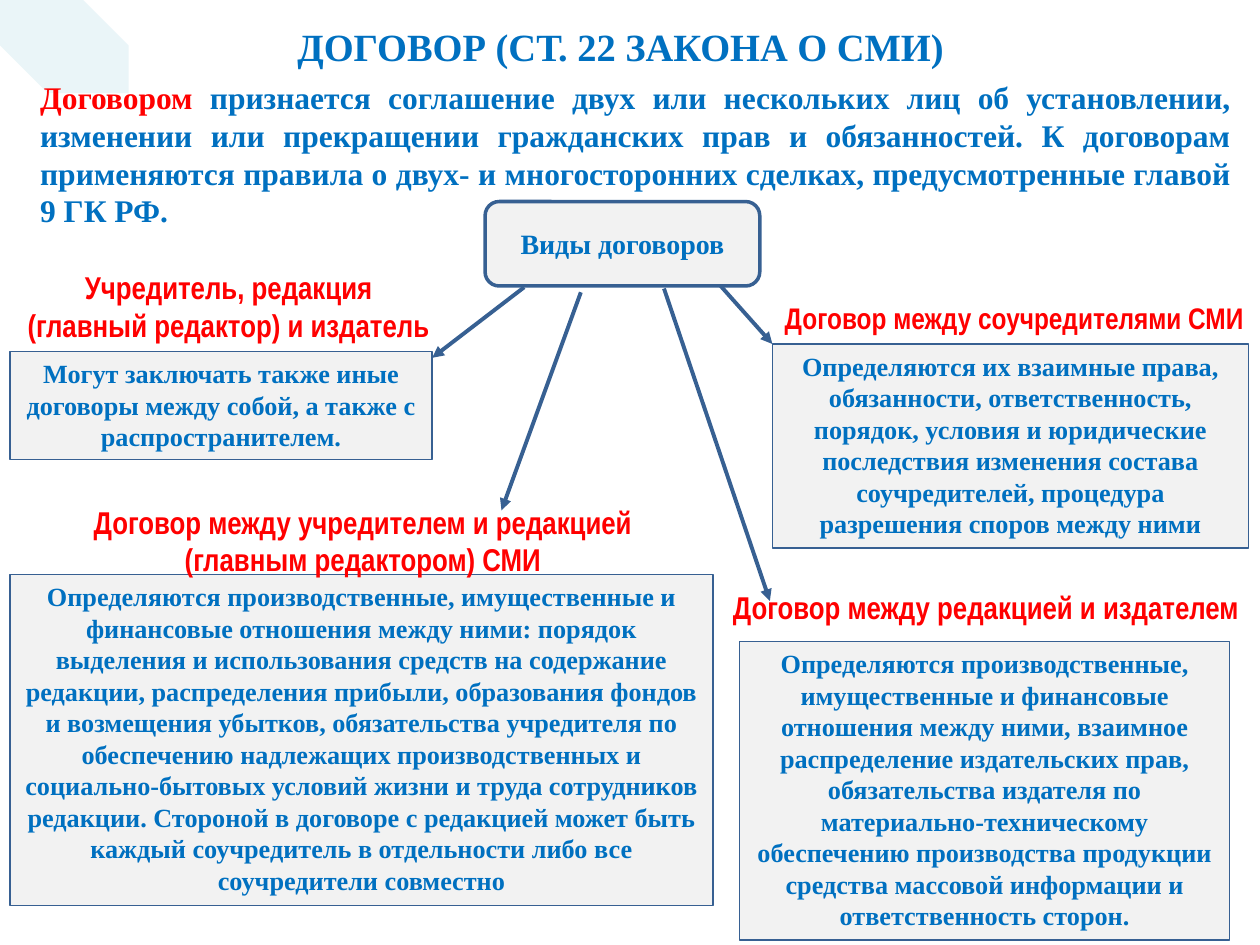
from lxml import etree
from pptx import Presentation
from pptx import util as u
from pptx.dml.color import RGBColor
from pptx.enum import shapes, text
from pptx.oxml.ns import qn

BLUE = RGBColor(0x00, 0x70, 0xC0)
RED = RGBColor(0xFF, 0x00, 0x00)
NAVY = RGBColor(0x37, 0x60, 0x92)
GREY = RGBColor(0xF2, 0xF2, 0xF2)
PALE = RGBColor(0xB7, 0xDE, 0xE8)
SERIF, NARROW = "Times New Roman", "Arial Narrow"
CENTER, JUSTIFY = text.PP_ALIGN.CENTER, text.PP_ALIGN.JUSTIFY
TOP, MIDDLE = text.MSO_ANCHOR.TOP, text.MSO_ANCHOR.MIDDLE
RECT, ROUNDED = shapes.MSO_SHAPE.RECTANGLE, shapes.MSO_SHAPE.ROUNDED_RECTANGLE

prs = Presentation()
prs.slide_width, prs.slide_height = u.Inches(10), u.Inches(7.5)
slide = prs.slides.add_slide(prs.slide_layouts[6])


def write(shape, runs, size, font, align=CENTER, anchor=TOP):
    frame = shape.text_frame
    frame.word_wrap = True
    frame.vertical_anchor = anchor
    paragraph = frame.paragraphs[0]
    paragraph.alignment = align
    for words, color in runs:
        run = paragraph.add_run()
        run.text = words
        style = {"size": u.Pt(size), "name": font, "bold": True}
        for key, value in style.items():
            setattr(run.font, key, value)
        run.font.color.rgb = color


def add_box(preset, place, fill, line_width=None):
    box = slide.shapes.add_shape(preset, *map(u.Inches, place))
    box.shadow.inherit = False
    box.fill.solid()
    box.fill.fore_color.rgb = fill
    if line_width:
        box.line.color.rgb = NAVY
        box.line.width = u.Pt(line_width)
    else:
        box.line.fill.background()
    return box


corner = add_box(shapes.MSO_SHAPE.SNIP_2_DIAG_RECTANGLE, (0, -0.02, 1.02, 0.76), PALE)
corner.adjustments[0], corner.adjustments[1] = 0, 0.5
corner_color = corner.fill._xPr.find(qn("a:solidFill"))[0]
etree.SubElement(corner_color, qn("a:alpha"), val="29000")

kinds = add_box(ROUNDED, (3.85, 1.6, 2.18, 0.67), GREY, 2)
write(kinds, [("Виды договоров", BLUE)], 16, SERIF, anchor=MIDDLE)

descriptions = [
    ((6.13, 2.73, 3.78, 1.62),
     "Определяются их взаимные права, обязанности, ответственность, порядок, условия и "
     "юридические последствия изменения состава соучредителей, процедура разрешения "
     "споров между ними"),
    ((0.08, 4.56, 5.58, 2.63),
     "Определяются производственные, имущественные и финансовые отношения между ними: "
     "порядок выделения и использования средств на содержание редакции, распределения "
     "прибыли, образования фондов и возмещения убытков, обязательства учредителя по "
     "обеспечению надлежащих производственных и социально-бытовых условий жизни и труда "
     "сотрудников редакции. Стороной в договоре с редакцией может быть каждый "
     "соучредитель в отдельности либо все соучредители совместно"),
    ((5.87, 5.09, 3.89, 2.37),
     "Определяются производственные, имущественные и финансовые отношения между ними, "
     "взаимное распределение издательских прав, обязательства издателя по "
     "материально-техническому обеспечению производства продукции средства массовой "
     "информации и ответственность сторон."),
    ((0.08, 2.79, 3.35, 0.86),
     "Могут заключать также иные договоры между собой, а также с распространителем."),
]
for place, words in descriptions:
    write(add_box(RECT, place, GREY, 0.75), [(words, BLUE)], 15, SERIF)

arrows = [
    ((5.72, 2.27), (6.13, 2.73)),
    ((4.61, 2.32), (3.98, 4.05)),
    ((5.27, 2.29), (6.11, 4.77)),
    ((4.16, 2.28), (3.43, 2.84)),
]
for start, end in arrows:
    arrow = slide.shapes.add_connector(
        shapes.MSO_CONNECTOR.STRAIGHT, *map(u.Inches, start + end))
    arrow.line.color.rgb = NAVY
    arrow.line.width = u.Pt(2.25)
    etree.SubElement(arrow.line._get_or_add_ln(), qn("a:tailEnd"), type="triangle")
    etree.SubElement(arrow._element.spPr, qn("a:effectLst"))

definition = [
    ("Договором ", RED),
    ("признается соглашение двух или нескольких лиц об установлении, изменении или "
     "прекращении гражданских прав и обязанностей. К договорам применяются правила о "
     "двух- и многосторонних сделках, предусмотренные главой 9 ГК РФ.", BLUE),
]
captions = [
    ((1.87, 0.13, 6.11, 0.47), [("ДОГОВОР (СТ. 22 ЗАКОНА О СМИ)", BLUE)], 22, SERIF, CENTER),
    ((0.22, 0.57, 9.65, 1.31), definition, 18, SERIF, JUSTIFY),
    ((5.65, 4.62, 4.35, 0.4),
     [("Договор между редакцией и издателем", RED)], 18, NARROW, CENTER),
    ((0.08, 2.08, 3.47, 0.71),
     [("Учредитель, редакция (главный редактор) и издатель", RED)], 18, NARROW, CENTER),
    ((6.07, 2.33, 3.96, 0.39),
     [("Договор между соучредителями СМИ", RED)], 17, NARROW, CENTER),
    ((0.22, 3.94, 5.32, 0.71),
     [("Договор между учредителем и редакцией (главным редактором) СМИ", RED)],
     18, NARROW, CENTER),
]
for place, runs, size, font, align in captions:
    caption = slide.shapes.add_textbox(*map(u.Inches, place))
    write(caption, runs, size, font, align)

prs.save("out.pptx")
